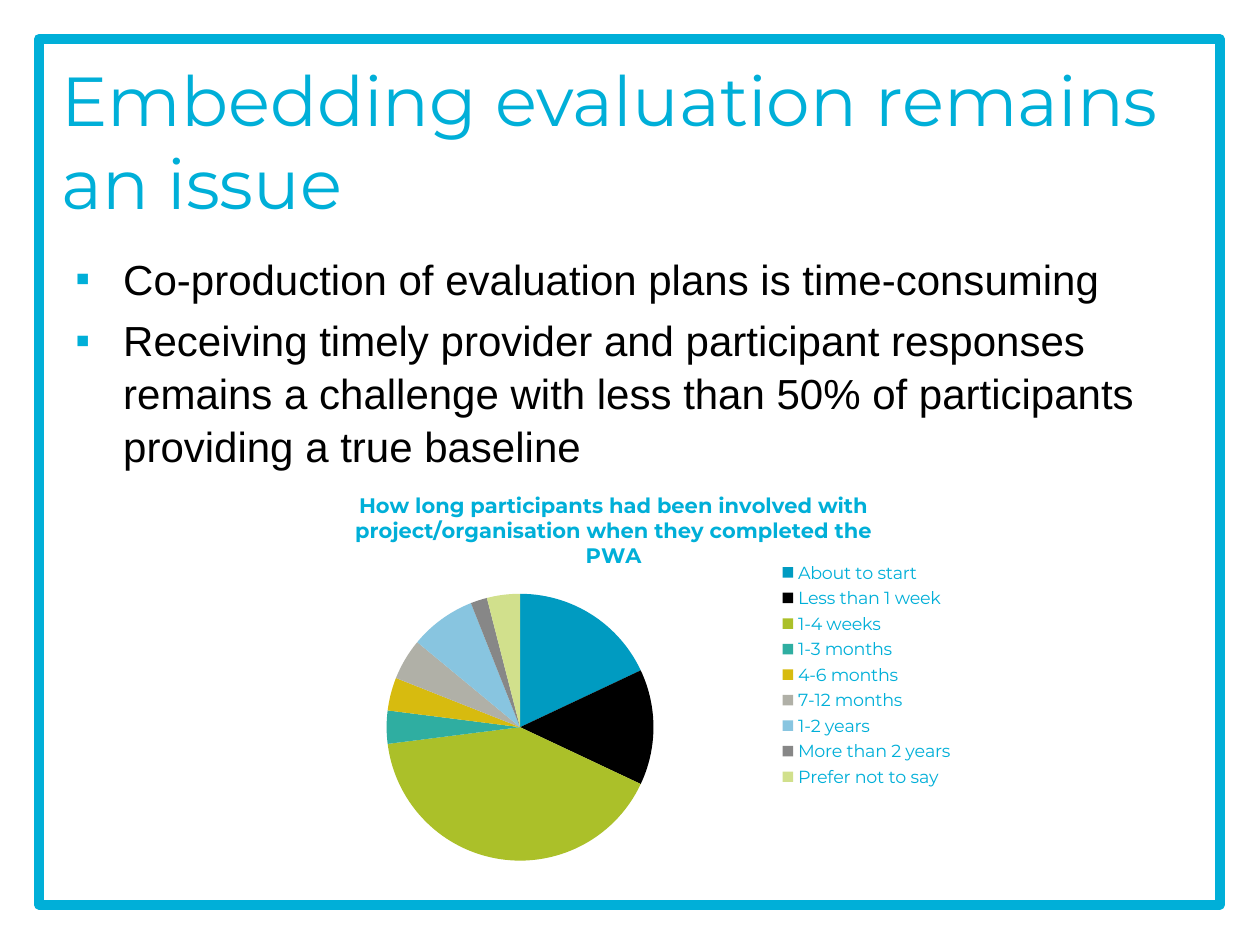
"""Builds a slide on embedding evaluation, with two bullets and a pie chart."""
from lxml import etree
from pptx import Presentation
from pptx.chart.data import CategoryChartData
from pptx.dml.color import RGBColor
from pptx.enum.chart import XL_CHART_TYPE, XL_LEGEND_POSITION
from pptx.enum.shapes import MSO_SHAPE
from pptx.enum.text import MSO_ANCHOR
from pptx.oxml import parse_xml
from pptx.oxml.ns import nsdecls, qn
from pptx.util import Inches, Pt

PIE = XL_CHART_TYPE.PIE
RIGHT = XL_LEGEND_POSITION.RIGHT
RECTANGLE = MSO_SHAPE.RECTANGLE
MIDDLE = MSO_ANCHOR.MIDDLE
hex_color = RGBColor.from_string
ACCENT = "00AFD8"

deck = Presentation()
deck.slide_width, deck.slide_height = Inches(10), Inches(7.5)
page = deck.slides.add_slide(deck.slide_layouts[6])


def area(left, top, width, height):
    """Turn percentages of the slide into a position and size."""
    across, down = deck.slide_width / 100, deck.slide_height / 100
    return int(left * across), int(top * down), int(width * across), int(height * down)


def style(font, color, **values):
    """Set the colour and the other given values of a font."""
    font.color.rgb = hex_color(color)
    for name, value in values.items():
        setattr(font, name, value)


frame = page.shapes.add_shape(RECTANGLE, *area(3.1, 4.13, 93.7, 91.6))
frame.shadow.inherit = False
frame.fill.background()
frame.line.color.rgb = hex_color(ACCENT)
frame.line.width = Pt(5.67)

title = page.shapes.add_textbox(*area(3.9, 6.53, 91.1, 16.67)).text_frame
title.word_wrap = True
title.vertical_anchor = MIDDLE
title.text = "Embedding evaluation remains an issue"
style(title.paragraphs[0].font, ACCENT, name="Montserrat", size=Pt(39.6))

points = [
    "Co-production of evaluation plans is time-consuming",
    "Receiving timely provider and participant responses remains a challenge "
    "with less than 50% of participants providing a true baseline",
]
body = page.shapes.add_textbox(*area(5, 25.87, 87.6, 26.27)).text_frame
body.word_wrap = True
for number, point in enumerate(points):
    para = body.add_paragraph() if number else body.paragraphs[0]
    para.text = point
    para.line_spacing = 1.05
    para.space_before = Pt(4.8 if number else 0)
    settings = para._p.get_or_add_pPr()
    settings.set("marL", str(Inches(0.38)))
    settings.set("indent", str(-Inches(0.38)))
    bullet_color = etree.SubElement(settings, qn("a:buClr"))
    etree.SubElement(bullet_color, qn("a:srgbClr"), val=ACCENT)
    etree.SubElement(settings, qn("a:buFont"), typeface="Arial")
    etree.SubElement(settings, qn("a:buChar"), char="▪")
    style(para.font, "000000", name="Arial", size=Pt(24))

slices = [
    ("About to start", 18, "009BC1"),
    ("Less than 1 week", 14, "000000"),
    ("1-4 weeks", 41, "ABC029"),
    ("1-3 months", 4, "2FAEA1"),
    ("4-6 months", 4, "D7BB0F"),
    ("7-12 months", 5, "B0B0A7"),
    ("1-2 years", 8, "88C5E0"),
    ("More than 2 years", 2, "878787"),
    ("Prefer not to say", 4, "D1E08C"),
]
names, shares, colors = zip(*slices)
data = CategoryChartData()
data.categories = names
data.add_series("Series 1", shares)
chart = page.shapes.add_chart(PIE, *area(21.2, 50, 55, 42.8), data).chart
style(chart.font, ACCENT, name="Montserrat", size=Pt(10))

heading = chart.chart_title.text_frame
heading.text = "How long participants had been involved with project/organisation when they completed the PWA"
style(heading.paragraphs[0].font, ACCENT, name="Montserrat", size=Pt(12), bold=True)

chart.has_legend = True
chart.legend.position = RIGHT
chart.legend.include_in_layout = False

plot = chart.plots[0]
plot.vary_by_categories = True
for number, color in enumerate(colors):
    fill = plot.series[0].points[number].format.fill
    fill.solid()
    fill.fore_color.rgb = hex_color(color)

plot_area = chart._chartSpace.chart.plotArea
for old_layout in plot_area.findall(qn("c:layout")):
    plot_area.remove(old_layout)
layouts = [
    (plot_area, 0, {"x": 0.17, "y": 0.3, "w": 0.39, "h": 0.66}),
    (chart.legend._element, 1, {"x": 0.73, "y": 0.21, "w": 0.28, "h": 0.58}),
]
for element, position, values in layouts:
    target = '<c:layoutTarget val="inner"/>' if element is plot_area else ""
    modes = "".join(f'<c:{key}Mode val="edge"/>' for key in "xy")
    sizes = "".join(f'<c:{key} val="{value}"/>' for key, value in values.items())
    for old_layout in element.findall(qn("c:layout")):
        element.remove(old_layout)
    element.insert(position, parse_xml(
        f"<c:layout {nsdecls('c')}><c:manualLayout>{target}{modes}{sizes}</c:manualLayout></c:layout>"))

deck.save("out.pptx")
